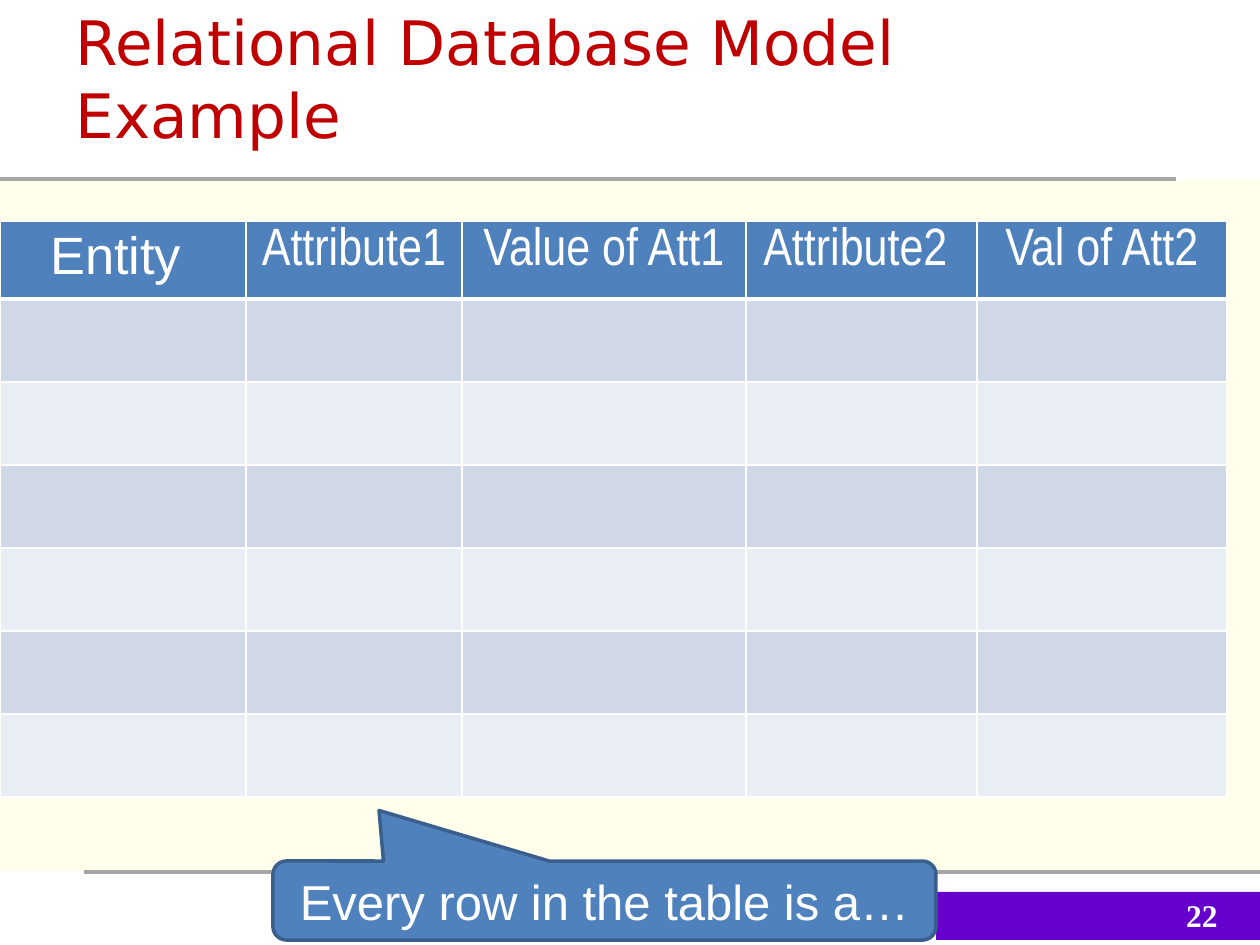
from dataclasses import dataclass

from lxml.etree import SubElement
from pptx import Presentation
from pptx.dml.color import RGBColor
from pptx.enum.shapes import MSO_CONNECTOR as Connector, MSO_SHAPE as Preset
from pptx.enum.text import MSO_ANCHOR as Anchor, PP_ALIGN as Align
from pptx.oxml.ns import qn
from pptx.util import Emu, Pt

PX_PER_INCH = 126
EMU_PER_INCH = 914400

COLORS = {
    "cream": "FFFFCC",
    "rule": "A6A6A6",
    "purple": "6600CC",
    "title": "C00000",
    "white": "FFFFFF",
    "blue": "4F81BD",
    "outline": "3A5F8C",
    "odd_row": "D0D8E8",
    "even_row": "E9EDF4",
}


@dataclass(frozen=True)
class Box:
    left: int
    top: int
    width: int
    height: int


@dataclass(frozen=True)
class Style:
    font: str
    size: int
    color: str
    align: Align = Align.LEFT
    bold: bool = False


@dataclass(frozen=True)
class Column:
    heading: str
    width: int
    font: str = "Arial Narrow"


@dataclass(frozen=True)
class Rule:
    left: int
    right: int
    y: int


COLUMNS = [
    Column("Entity ", 246, "Arial"),
    Column("Attribute1 ", 216),
    Column("Value of Att1", 284),
    Column("Attribute2 ", 231),
    Column("Val of Att2", 250),
]
HEADER_HEIGHT = 78
ROW_HEIGHT = 83
BODY_ROWS = 6
RULES = [Rule(84, 1260, 872), Rule(0, 1176, 179)]


def px(length: int) -> Emu:
    return Emu(round(length * EMU_PER_INCH / PX_PER_INCH))


def place(box: Box) -> tuple[Emu, ...]:
    return px(box.left), px(box.top), px(box.width), px(box.height)


def rgb(name: str) -> RGBColor:
    return RGBColor.from_string(COLORS[name])


def write(frame, text: str, style: Style):
    paragraph = frame.paragraphs[0]
    paragraph.text = text
    paragraph.alignment = style.align
    font = paragraph.font
    font.name, font.size, font.bold = style.font, Pt(style.size), style.bold
    font.color.rgb = rgb(style.color)
    return paragraph


def add_panel(slide, preset: Preset, box: Box, fill: str):
    panel = slide.shapes.add_shape(preset, *place(box))
    panel.shadow.inherit = False
    panel.fill.solid()
    panel.fill.fore_color.rgb = rgb(fill)
    panel.line.fill.background()
    return panel


def add_rule(slide, rule: Rule) -> None:
    line = slide.shapes.add_connector(
        Connector.STRAIGHT, px(rule.left), px(rule.y), px(rule.right), px(rule.y)
    )
    line.line.color.rgb = rgb("rule")
    line.line.width = Pt(2)
    SubElement(line._element.spPr, qn("a:effectLst"))


def add_text(slide, box: Box, text: str, style: Style, anchor: Anchor):
    frame = slide.shapes.add_textbox(*place(box)).text_frame
    frame.word_wrap = True
    frame.vertical_anchor = anchor
    return write(frame, text, style)


def style_cell(cell, fill: str, bottom: int) -> None:
    properties = cell._tc.get_or_add_tcPr()
    for side, width in {"lnL": 1, "lnR": 1, "lnT": 1, "lnB": bottom}.items():
        border = SubElement(properties, qn(f"a:{side}"), w=str(Pt(width)))
        color = SubElement(border, qn("a:solidFill"))
        SubElement(color, qn("a:srgbClr"), val=COLORS["white"])
    cell.fill.solid()
    cell.fill.fore_color.rgb = rgb(fill)


def add_entity_table(slide, left: int, top: int) -> None:
    heights = [HEADER_HEIGHT] + [ROW_HEIGHT] * BODY_ROWS
    box = Box(left, top, sum(column.width for column in COLUMNS), sum(heights))
    table = slide.shapes.add_table(len(heights), len(COLUMNS), *place(box)).table
    for row, height in zip(table.rows, heights):
        row.height = px(height)
    for index, column in enumerate(COLUMNS):
        table.columns[index].width = px(column.width)
        heading = table.cell(0, index)
        style_cell(heading, "blue", 3)
        write(heading.text_frame, column.heading,
              Style(column.font, 30, "white", Align.CENTER))
        for row in range(1, len(heights)):
            style_cell(table.cell(row, index), "odd_row" if row % 2 else "even_row", 1)


def add_callout(slide) -> None:
    callout = add_panel(slide, Preset.ROUNDED_RECTANGULAR_CALLOUT,
                        Box(273, 861, 663, 79), "blue")
    for index, value in enumerate((-0.34, -1.14, 0.17)):
        callout.adjustments[index] = value
    callout.line.color.rgb = rgb("outline")
    callout.line.width = Pt(2)
    callout.text_frame.word_wrap = True
    callout.text_frame.vertical_anchor = Anchor.MIDDLE
    write(callout.text_frame, "Every row in the table is a…",
          Style("Arial", 28, "white", Align.CENTER))


def main() -> None:
    deck = Presentation()
    deck.slide_width, deck.slide_height = px(1260), px(945)
    slide = deck.slides.add_slide(deck.slide_layouts[6])

    backdrop = add_panel(slide, Preset.RECTANGLE, Box(0, 180, 1260, 691), "cream")
    tint = backdrop.fill._xPr.find(".//" + qn("a:srgbClr"))
    SubElement(tint, qn("a:alpha"), val="39000")
    add_panel(slide, Preset.RECTANGLE, Box(936, 892, 324, 48), "purple")
    for rule in RULES:
        add_rule(slide, rule)

    title = add_text(slide, Box(63, 10, 1124, 147), "Relational Database Model Example",
                     Style("DejaVu Sans", 35, "title"), Anchor.BOTTOM)
    title.space_before = title.space_after = Pt(6)
    add_text(slide, Box(936, 890, 294, 50), "22",
             Style("Times New Roman", 18, "white", Align.RIGHT, True), Anchor.MIDDLE)

    add_entity_table(slide, 0, 221)
    add_callout(slide)
    deck.save("out.pptx")


if __name__ == "__main__":
    main()
